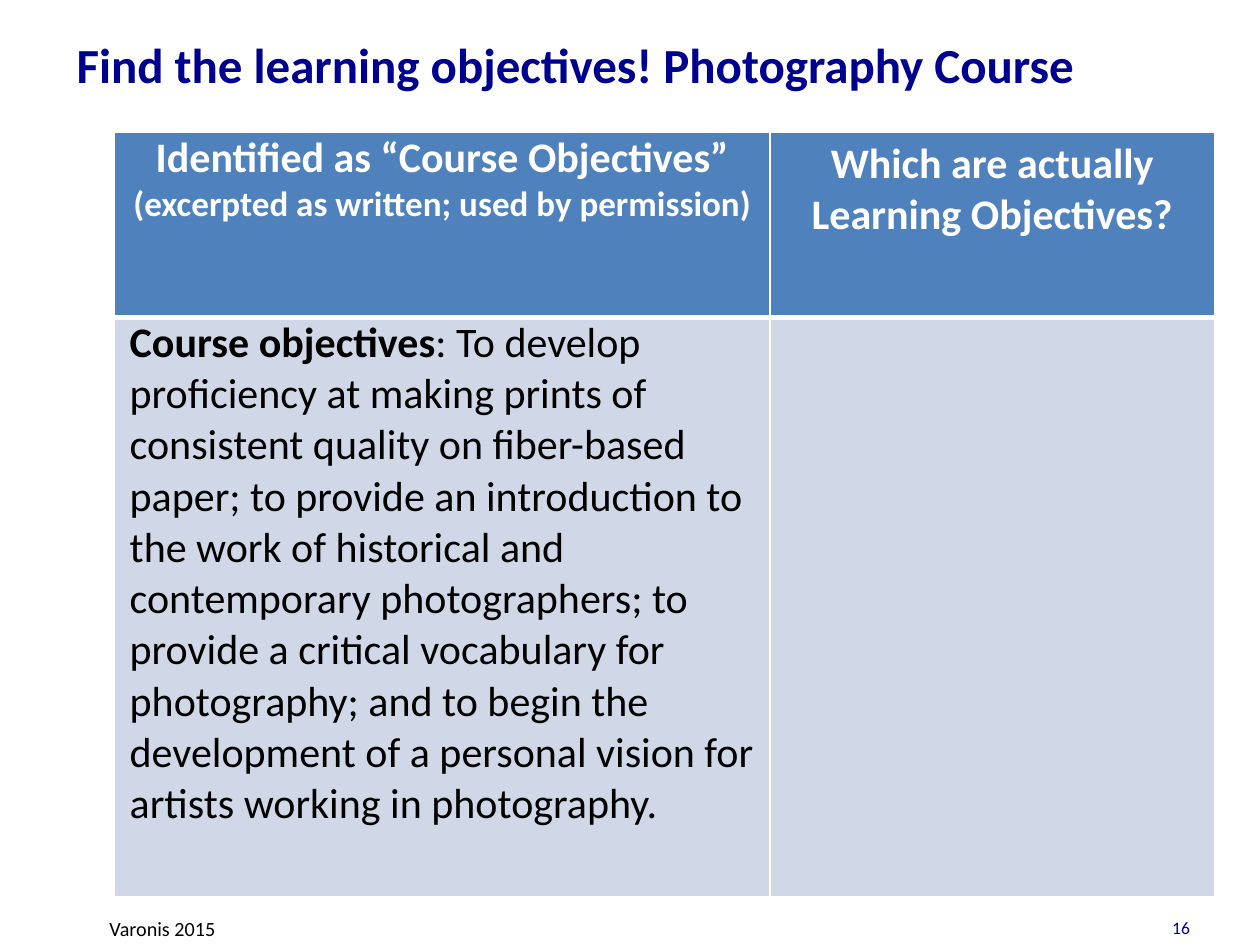
"""Build the photography course slide with its table of objectives."""
from dataclasses import dataclass
from typing import Optional

from lxml import etree
from pptx import Presentation
from pptx import util as u
from pptx.dml.color import RGBColor
from pptx.enum import text as t
from pptx.oxml.ns import qn


@dataclass(frozen=True)
class Theme:
    font: str = "Calibri"
    navy: str = "000090"
    black: str = "000000"
    white: str = "FFFFFF"
    header_fill: str = "4F81BD"
    body_fill: str = "D0D8E8"
    title_size: float = 28
    table_size: float = 24
    note_size: float = 20
    footer_size: float = 11.5
    number_size: float = 10
    thin_border: float = 1
    thick_border: float = 3


THEME = Theme()


@dataclass(frozen=True)
class Line:
    text: str
    size: float
    color: str
    bold: Optional[bool] = False
    align: t.PP_ALIGN = t.PP_ALIGN.LEFT
    lead: str = ""


@dataclass(frozen=True)
class Label:
    line: Line
    left: float
    top: float
    width: float
    height: float
    anchor: t.MSO_ANCHOR = t.MSO_ANCHOR.MIDDLE


@dataclass(frozen=True)
class Cell:
    lines: tuple[Line, ...]
    fill: str
    bottom_border: float
    tight: bool = False


def header_line(words: str, size: float = THEME.table_size) -> Line:
    return Line(words, size, THEME.white, True, t.PP_ALIGN.CENTER)


LABELS = (
    Label(Line("Varonis 2015", THEME.footer_size, THEME.black),
          55.5, 520, 604, 21, t.MSO_ANCHOR.TOP),
    Label(Line("Find the learning objectives! Photography Course",
               THEME.title_size, THEME.navy, True), 36.75, 3.6, 683.25, 66.25),
    Label(Line("16", THEME.number_size, THEME.navy, align=t.PP_ALIGN.RIGHT),
          659.5, 520.5, 27.5, 19.5),
)
OBJECTIVES = Line(
    ": To develop proficiency at making prints of consistent quality on "
    "fiber-based paper; to provide an introduction to the work of historical "
    "and contemporary photographers; to provide a critical vocabulary for "
    "photography; and to begin the development of a personal vision for "
    "artists working in photography.",
    THEME.table_size, THEME.black, None, lead="Course objectives")
ROWS = (
    (Cell((header_line("Identified as “Course Objectives”"),
           header_line("(excerpted as written; used by permission)", THEME.note_size)),
          THEME.header_fill, THEME.thick_border, True),
     Cell((header_line("Which are actually"), header_line("Learning Objectives?")),
          THEME.header_fill, THEME.thick_border)),
    (Cell((OBJECTIVES,), THEME.body_fill, THEME.thin_border, True),
     Cell((), THEME.body_fill, THEME.thin_border)),
)
TABLE_LEFT, TABLE_TOP = 65.5, 75.6
COLUMN_WIDTHS = (374.4, 254.2)
ROW_HEIGHTS = (105.8, 331.2)


def write_lines(frame, lines: tuple[Line, ...]) -> None:
    for index, line in enumerate(lines):
        paragraph = frame.add_paragraph() if index else frame.paragraphs[0]
        paragraph.alignment = line.align
        font = paragraph.font
        font.name, font.size, font.bold = THEME.font, u.Pt(line.size), line.bold
        font.color.rgb = RGBColor.from_string(line.color)
        if line.lead:
            lead = paragraph.add_run()
            lead.text, lead.font.bold = line.lead, True
        body = paragraph.add_run()
        body.text = line.text
        if line.lead:
            body.font.bold = False


def add_label(slide, label: Label) -> None:
    box = slide.shapes.add_textbox(*map(
        u.Pt, (label.left, label.top, label.width, label.height)))
    box.text_frame.word_wrap = True
    box.text_frame.vertical_anchor = label.anchor
    write_lines(box.text_frame, (label.line,))


def add_border(properties, side: str, width: float) -> None:
    border = etree.SubElement(properties, qn(f"a:ln{side}"), w=str(u.Pt(width)))
    solid = etree.SubElement(border, qn("a:solidFill"))
    etree.SubElement(solid, qn("a:srgbClr"), val=THEME.white)


def fill_cell(target, cell: Cell, top_border: float) -> None:
    properties = target._tc.get_or_add_tcPr()
    widths = {"L": THEME.thin_border, "R": THEME.thin_border,
              "T": top_border, "B": cell.bottom_border}
    for side, width in widths.items():
        add_border(properties, side, width)
    target.fill.solid()
    target.fill.fore_color.rgb = RGBColor.from_string(cell.fill)
    if cell.tight:
        target.margin_left = target.margin_right = u.Pt(8.64)
        target.margin_top = target.margin_bottom = u.Pt(0)
    write_lines(target.text_frame, cell.lines)


def add_objectives_table(slide) -> None:
    table = slide.shapes.add_table(
        len(ROWS), len(COLUMN_WIDTHS), u.Pt(TABLE_LEFT), u.Pt(TABLE_TOP),
        u.Pt(sum(COLUMN_WIDTHS)), u.Pt(sum(ROW_HEIGHTS))).table
    for column, width in zip(table.columns, COLUMN_WIDTHS):
        column.width = u.Pt(width)
    for row, height in zip(table.rows, ROW_HEIGHTS):
        row.height = u.Pt(height)
    for row_index, cells in enumerate(ROWS):
        for column_index, cell in enumerate(cells):
            top = (ROWS[row_index - 1][column_index].bottom_border
                   if row_index else THEME.thin_border)
            fill_cell(table.cell(row_index, column_index), cell, top)


def main() -> None:
    deck = Presentation()
    deck.slide_width, deck.slide_height = u.Pt(720), u.Pt(540)
    slide = deck.slides.add_slide(deck.slide_layouts[6])
    for label in LABELS:
        add_label(slide, label)
    add_objectives_table(slide)
    deck.save("out.pptx")


if __name__ == "__main__":
    main()
